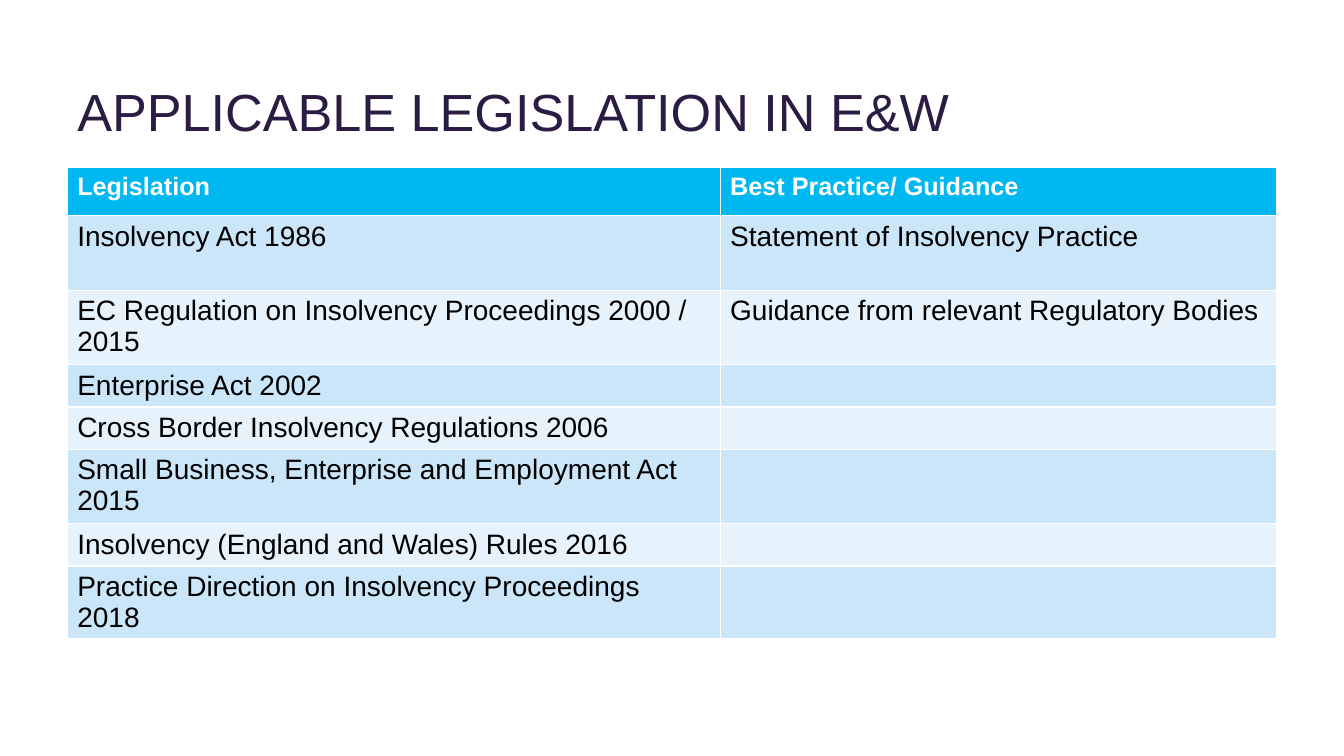
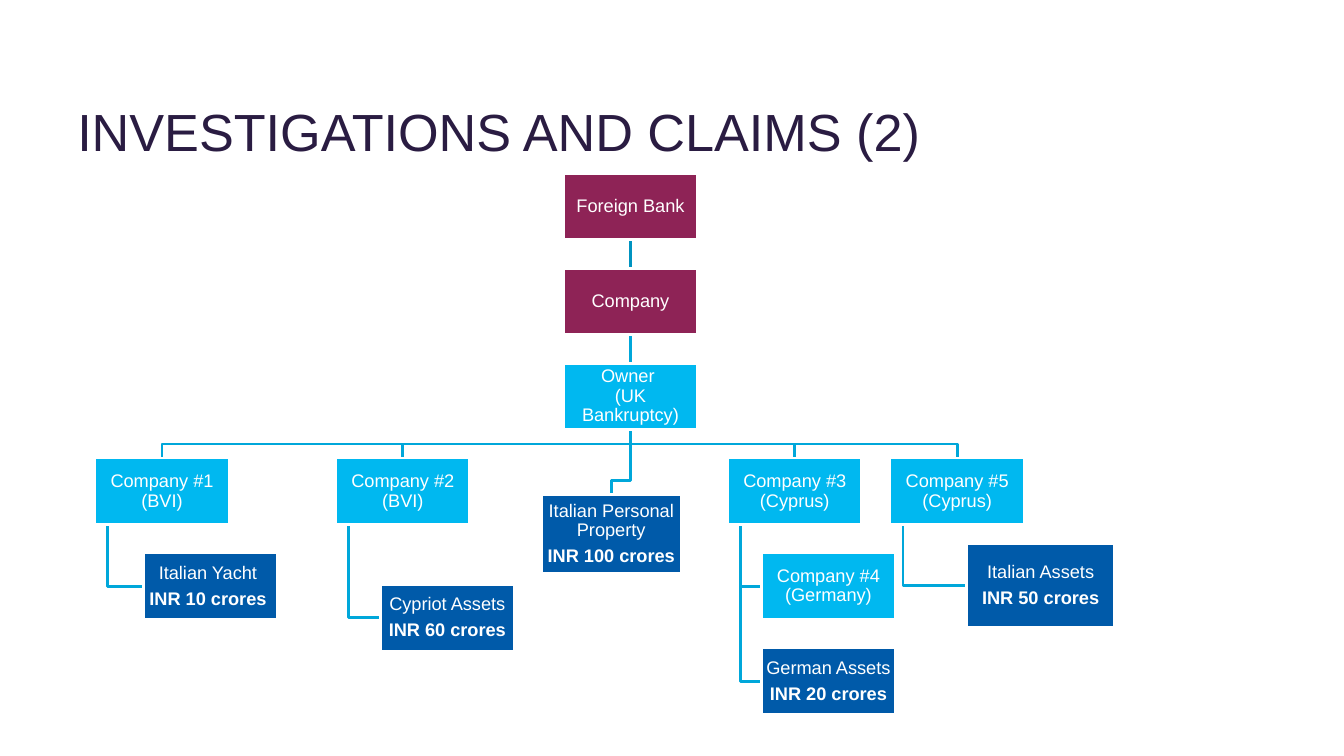
from dataclasses import dataclass
from itertools import cycle

from lxml import etree
from pptx import Presentation
from pptx.dml.color import RGBColor
from pptx.enum import shapes, text
from pptx.oxml import ns
from pptx.util import Pt


@dataclass(frozen=True)
class Theme:
    font: str = "Arial"
    title_size: float = 37.3
    header_size: float = 18
    cell_size: float = 20
    box_size: float = 13
    title: str = "2A1C42"
    white: str = "FFFFFF"
    black: str = "000000"
    creditor: str = "8E2356"
    entity: str = "00B8F0"
    asset: str = "005AA9"
    link: str = "00A7DA"
    top_link: str = "0093C0"
    bands: tuple = ("CCE6F9", "E7F3FC")
    line_width: float = 2


THEME = Theme()
MARGIN, CONTENT_WIDTH = 48, 864
BOX_WIDTH, BOX_HEIGHT = 95.8, 47.5
FIRST_LEVEL, LEVEL_PITCH = 123.8, 67.8
RAIL_GAP, STEM_INSET = 10, 9.2


def level(number):
    """Top of a level of the chart, counted from 0."""
    return FIRST_LEVEL + number * LEVEL_PITCH


@dataclass(frozen=True)
class Box:
    label: str
    color: str
    left: float
    top: float
    amount: str = ""
    width: float = BOX_WIDTH
    height: float = BOX_HEIGHT

    @property
    def center(self):
        return self.left + self.width / 2

    @property
    def middle(self):
        return self.top + self.height / 2

    @property
    def bottom(self):
        return self.top + self.height


class Deck:
    """Holds the style and the current slide."""

    def __init__(self, theme):
        self.theme = theme
        self.presentation = Presentation()
        self.presentation.slide_width = Pt(960)
        self.presentation.slide_height = Pt(540)
        self.slide = None

    def set_font(self, paragraph, size, color, bold=False):
        font = paragraph.font
        font.name, font.size, font.bold = self.theme.font, Pt(size), bold
        font.color.rgb = RGBColor.from_string(color)

    def set_line(self, shape, color):
        shape.line.color.rgb = RGBColor.from_string(color)
        shape.line.width = Pt(self.theme.line_width)

    def add_slide(self, title, top, height):
        layout = self.presentation.slide_layouts[5]
        self.slide = self.presentation.slides.add_slide(layout)
        shape = self.slide.shapes.title
        shape.left, shape.top = Pt(MARGIN), Pt(top)
        shape.width, shape.height = Pt(CONTENT_WIDTH), Pt(height)
        frame = shape.text_frame
        frame.text = title
        frame.auto_size = text.MSO_AUTO_SIZE.NONE
        frame.vertical_anchor = text.MSO_ANCHOR.BOTTOM
        frame.margin_left = frame.margin_right = Pt(7.2)
        frame.margin_top, frame.margin_bottom = Pt(0), Pt(3.6)
        paragraph = frame.paragraphs[0]
        paragraph.alignment = text.PP_ALIGN.LEFT
        paragraph.line_spacing = 0.8
        self.set_font(paragraph, self.theme.title_size, self.theme.title)

    def add_table(self, rows, top, widths, heights):
        table = self.slide.shapes.add_table(
            len(rows), len(widths), Pt(MARGIN), Pt(top),
            Pt(sum(widths)), Pt(sum(heights))).table
        for column, width in zip(table.columns, widths):
            column.width = Pt(width)
        bands = cycle(self.theme.bands)
        for index, (row, values, height) in enumerate(zip(table.rows, rows, heights)):
            row.height = Pt(height)
            header = index == 0
            fill = self.theme.entity if header else next(bands)
            size = self.theme.header_size if header else self.theme.cell_size
            color = self.theme.white if header else self.theme.black
            for cell, value in zip(row.cells, values):
                cell.fill.solid()
                cell.fill.fore_color.rgb = RGBColor.from_string(fill)
                cell.text = value
                self.set_font(cell.text_frame.paragraphs[0], size, color, header)

    def add_box(self, box):
        shape = self.slide.shapes.add_shape(
            shapes.MSO_SHAPE.RECTANGLE, Pt(box.left), Pt(box.top),
            Pt(box.width), Pt(box.height))
        shape.shadow.inherit = False
        shape.fill.solid()
        shape.fill.fore_color.rgb = RGBColor.from_string(box.color)
        self.set_line(shape, self.theme.white)
        frame = shape.text_frame
        frame.word_wrap = True
        frame.vertical_anchor = text.MSO_ANCHOR.MIDDLE
        frame.margin_left = frame.margin_right = Pt(0.7)
        frame.margin_top = frame.margin_bottom = Pt(0.7)
        frame.text = box.label
        if box.amount:
            frame.add_paragraph().text = box.amount
        for index, paragraph in enumerate(frame.paragraphs):
            paragraph.alignment = text.PP_ALIGN.CENTER
            paragraph.line_spacing = 0.9
            paragraph.space_after = Pt(4.5)
            self.set_font(paragraph, self.theme.box_size, self.theme.white, index > 0)

    def add_straight_link(self, parent, child, color):
        connector = self.slide.shapes.add_connector(
            shapes.MSO_CONNECTOR.STRAIGHT, Pt(parent.center), Pt(parent.bottom),
            Pt(child.center), Pt(child.top))
        self.set_line(connector, color)
        etree.SubElement(connector._element.spPr, ns.qn("a:effectLst"))

    def add_bent_link(self, *points):
        start, *rest = [(Pt(x), Pt(y)) for x, y in points]
        builder = self.slide.shapes.build_freeform(*start)
        builder.add_line_segments(rest, close=False)
        shape = builder.convert_to_shape()
        shape.shadow.inherit = False
        shape.fill.background()
        self.set_line(shape, self.theme.link)

    def add_rail_link(self, parent, child):
        rail = child.top - RAIL_GAP
        self.add_bent_link((parent.center, parent.bottom), (parent.center, rail),
                           (child.center, rail), (child.center, child.top))

    def add_stem_link(self, parent, child):
        stem = parent.left + STEM_INSET
        self.add_bent_link((stem, parent.bottom), (stem, child.middle),
                           (child.left, child.middle))


def add_legislation(deck):
    deck.add_slide("APPLICABLE LEGISLATION IN E&W", 59, 45.4)
    rows = [
        ("Legislation", "Best Practice/ Guidance"),
        ("Insolvency Act 1986", "Statement of Insolvency Practice"),
        ("EC Regulation on Insolvency Proceedings 2000 / 2015",
         "Guidance from relevant Regulatory Bodies"),
        ("Enterprise Act 2002", ""),
        ("Cross Border Insolvency Regulations 2006", ""),
        ("Small Business, Enterprise and Employment Act 2015", ""),
        ("Insolvency (England and Wales) Rules 2016", ""),
        ("Practice Direction on Insolvency Proceedings 2018", ""),
    ]
    single, double = 30.2, 53.2
    heights = [34.6, double, double, single, single, double, single, 52]
    deck.add_table(rows, 119.6, [466.4, 397.6], heights)


def add_claims(deck):
    deck.add_slide("INVESTIGATIONS AND CLAIMS (2)", 36, 82.8)
    theme = deck.theme

    # Chain of claims down to the owner
    trunk = 402.4
    bank = Box("Foreign Bank", theme.creditor, trunk, level(0))
    company = Box("Company", theme.creditor, trunk, level(1))
    owner = Box("Owner \v(UK Bankruptcy)", theme.entity, trunk, level(2))

    # What the owner holds directly
    first, second, third, fifth = [
        Box(label, theme.entity, left, level(3)) for label, left in (
            ("Company #1 (BVI)", 67.8), ("Company #2 (BVI)", 239.8),
            ("Company #3 (Cyprus)", 519.8), ("Company #5 (Cyprus)", 635.8))]
    personal = Box("Italian Personal Property", theme.asset, 386.6, 353.5,
                   "INR 100 crores", 100, 56)

    # What the companies hold
    holdings = [
        (first, Box("Italian Yacht ", theme.asset, 102.4, level(4), "INR 10 crores ")),
        (second, Box("Cypriot Assets", theme.asset, 271.6, 417.6, "INR 60 crores")),
        (third, Box("Company #4\v(Germany)", theme.entity, 543.8, level(4))),
        (third, Box("German Assets", theme.asset, 543.8, level(5), "INR 20 crores")),
        (fifth, Box("Italian Assets", theme.asset, 690.4, 388, "INR 50 crores", 105.8, 60.5)),
    ]

    # Links lie behind the boxes
    owned = [first, second, personal, third, fifth]
    deck.add_straight_link(bank, company, theme.top_link)
    deck.add_straight_link(company, owner, theme.link)
    for child in owned:
        deck.add_rail_link(owner, child)
    for parent, child in holdings:
        deck.add_stem_link(parent, child)
    for box in [bank, company, owner, *owned, *(child for _, child in holdings)]:
        deck.add_box(box)


def main():
    deck = Deck(THEME)
    add_legislation(deck)
    add_claims(deck)
    deck.presentation.save("out.pptx")


if __name__ == "__main__":
    main()
